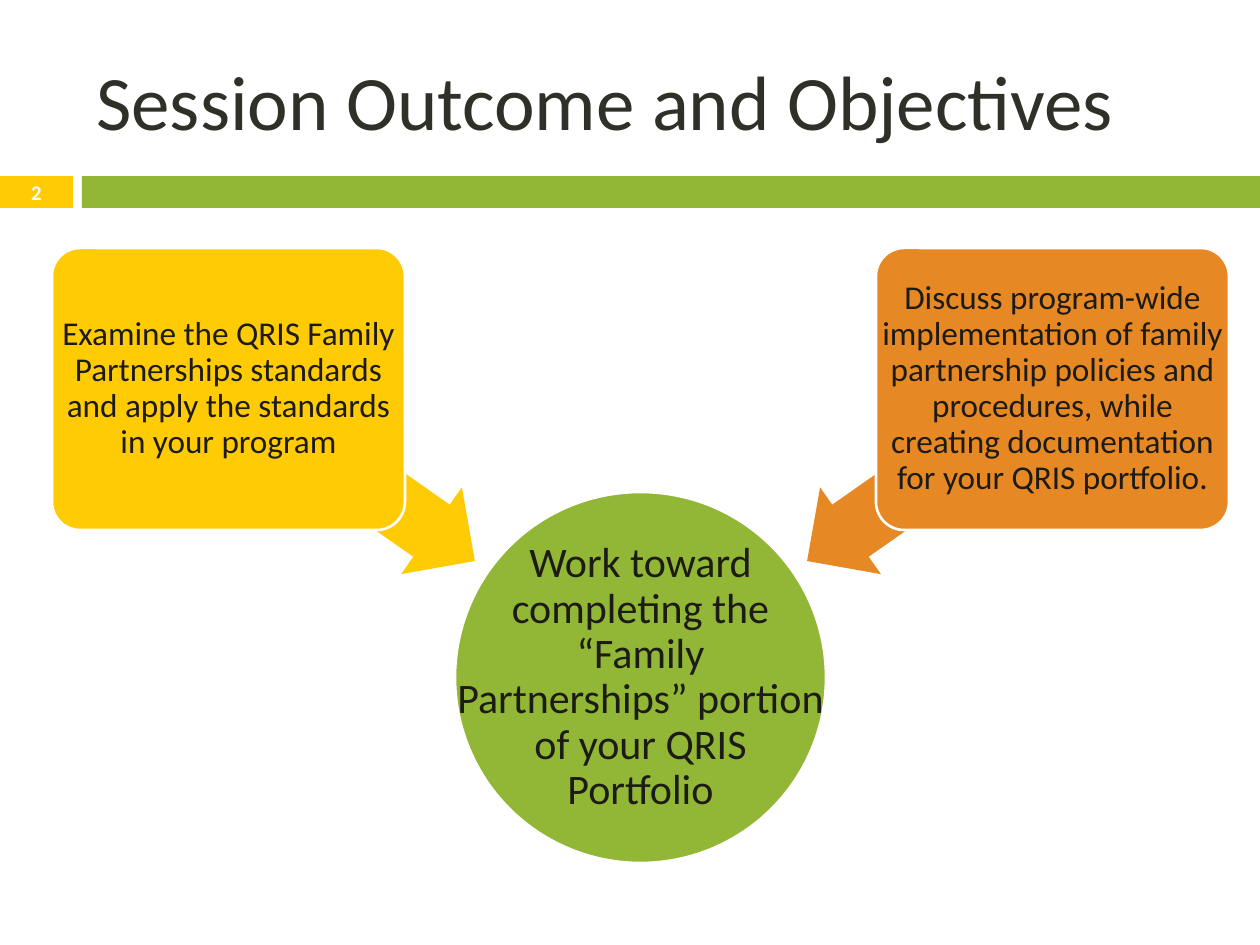
import pptx
import pptx.util
import pptx.dml.color
import pptx.enum.shapes
import pptx.enum.text

SCALE = 914400 / 126  # EMU per px
HUES = {
    "gold": "FFCB05",
    "green": "92B635",
    "orange": "E68924",
    "white": "FFFFFF",
    "title": "303029",
    "ink": "1D1B16",
}
FORMS = pptx.enum.shapes.MSO_SHAPE
ALIGN = pptx.enum.text.PP_ALIGN

deck = pptx.Presentation()
deck.slide_width = round(1260 * SCALE)
deck.slide_height = round(945 * SCALE)
slide = deck.slides.add_slide(deck.slide_layouts[6])


def add_form(kind, box, hue, edge=False, turn=0, adjust=()):
    form = slide.shapes.add_shape(kind, *[round(n * SCALE) for n in box])
    form.shadow.inherit = False
    form.fill.solid()
    form.fill.fore_color.rgb = pptx.dml.color.RGBColor.from_string(HUES[hue])
    if edge:
        form.line.color.rgb = pptx.dml.color.RGBColor.from_string(HUES["white"])
        form.line.width = pptx.util.Pt(1.5)
    else:
        form.line.fill.background()
    form.rotation = turn
    for i, part in enumerate(adjust):
        form.adjustments[i] = part


def add_text(text, box, size, hue="ink", bold=False, align=ALIGN.CENTER,
             space=0.9, inset=None):
    frame = slide.shapes.add_textbox(*[round(n * SCALE) for n in box]).text_frame
    frame.word_wrap = True
    frame.vertical_anchor = pptx.enum.text.MSO_ANCHOR.MIDDLE
    if inset is not None:
        gap = round(inset * SCALE)
        frame.margin_left = frame.margin_right = gap
        frame.margin_top = frame.margin_bottom = gap
    para = frame.paragraphs[0]
    para.alignment = align
    para.line_spacing = space
    run = para.add_run()
    run.text = text
    run.font.name = "Calibri"
    run.font.size = pptx.util.Pt(size)
    run.font.bold = bold
    run.font.color.rgb = pptx.dml.color.RGBColor.from_string(HUES[hue])


# Header
add_form(FORMS.RECTANGLE, (0, 176, 73, 32), "gold")
add_form(FORMS.RECTANGLE, (82, 176, 1178, 32), "green")
add_text("Session Outcome and Objectives", (84, 32, 1124, 136), 44,
         hue="title", align=ALIGN.LEFT, space=1.0)
add_text("2", (0, 175, 73, 34), 11.9, hue="white", bold=True, space=1.0)

# Outcome
goal = (455, 492, 371, 371)
add_form(FORMS.OVAL, goal, "green", edge=True)
add_text("Work toward completing the “Family Partnerships” portion of your "
         "QRIS Portfolio", goal, 24, inset=2)

# Objectives, each with an arrow to the outcome
aims = [
    (52, 202, 215, "gold",
     "Examine the QRIS Family Partnerships standards and apply the standards "
     "in your program"),
    (876, 780, 325, "orange",
     "Discuss program-wide implementation of family partnership policies and "
     "procedures, while creating documentation for your QRIS portfolio."),
]
for left, tail, turn, hue, text in aims:
    card = (left, 248, 353, 282)
    add_form(FORMS.LEFT_ARROW, (tail, 422, 300, 106), hue, turn=turn,
             adjust=(0.6, 0.5))
    add_form(FORMS.ROUNDED_RECTANGLE, card, hue, edge=True, adjust=(0.1,))
    add_text(text, card, 19, inset=5)

deck.save("out.pptx")
